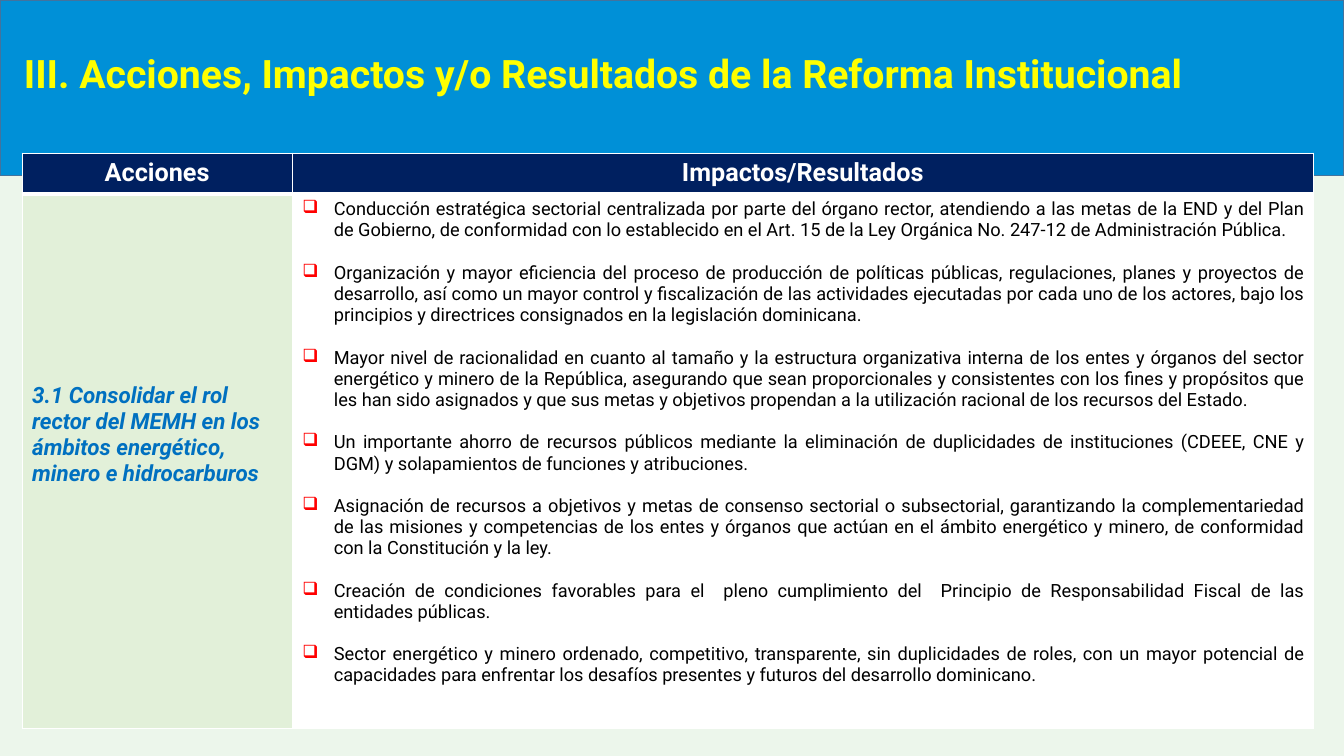
from lxml import etree
from pptx import Presentation
from pptx.dml.color import RGBColor
from pptx.enum import shapes, text
from pptx.oxml import ns
from pptx.util import Pt

FONT = "Roboto"
PALE_GREEN = RGBColor(0xEC, 0xF6, 0xEB)
BLUE = RGBColor(0x00, 0x90, 0xD7)
BLUE_EDGE = RGBColor(0x43, 0x73, 0x9E)
YELLOW = RGBColor(0xFF, 0xFF, 0x00)
NAVY = RGBColor(0x00, 0x20, 0x60)
WHITE = RGBColor(0xFF, 0xFF, 0xFF)
LIGHT_GREEN = RGBColor(0xE2, 0xF0, 0xD9)
ACTION_BLUE = RGBColor(0x00, 0x70, 0xC0)
BLACK = RGBColor(0x00, 0x00, 0x00)
RED = RGBColor(0xFF, 0x00, 0x00)

HEADERS = ["Acciones", "Impactos/Resultados"]
ACTION = "3.1 Consolidar el rol rector del MEMH en los ámbitos energético, minero e hidrocarburos"
RESULTS = [
    "Conducción estratégica sectorial centralizada por parte del órgano rector, atendiendo a las metas "
    "de la END y del Plan de Gobierno, de conformidad con lo establecido en el Art. 15 de la Ley "
    "Orgánica No. 247-12 de Administración Pública.",
    "Organización y mayor eficiencia del proceso de producción de políticas públicas, regulaciones, "
    "planes y proyectos de desarrollo, así como un mayor control y fiscalización de las actividades "
    "ejecutadas por cada uno de los actores, bajo los principios y directrices consignados en la "
    "legislación dominicana.",
    "Mayor nivel de racionalidad en cuanto al tamaño y la estructura organizativa interna de los entes "
    "y órganos del sector energético y minero de la República, asegurando que sean proporcionales y "
    "consistentes con los fines y propósitos que les han sido asignados y que sus metas y objetivos "
    "propendan a la utilización racional de los recursos del Estado.",
    "Un importante ahorro de recursos públicos mediante la eliminación de duplicidades de instituciones "
    "(CDEEE, CNE y DGM) y solapamientos de funciones y atribuciones.",
    "Asignación de recursos a objetivos y metas de consenso sectorial o subsectorial, garantizando la "
    "complementariedad de las misiones y competencias de los entes y órganos que actúan en el ámbito "
    "energético y minero, de conformidad con la Constitución y la ley.",
    "Creación de condiciones favorables para el  pleno cumplimiento del  Principio de Responsabilidad "
    "Fiscal de las entidades públicas.",
    "Sector energético y minero ordenado, competitivo, transparente, sin duplicidades de roles, con un "
    "mayor potencial de capacidades para enfrentar los desafíos presentes y futuros del desarrollo "
    "dominicano.",
]


def add_text(p, content, size, color, bold=False, italic=False, align=text.PP_ALIGN.LEFT):
    p.alignment = align
    r = p.add_run()
    r.text = content
    r.font.name = FONT
    r.font.size = Pt(size)
    r.font.bold = bold
    r.font.italic = italic
    r.font.color.rgb = color


def style_cell(cell, fill, bottom=1):
    tcPr = cell._tc.get_or_add_tcPr()
    for side, width in (("L", 1), ("R", 1), ("T", 1), ("B", bottom)):
        ln = etree.SubElement(tcPr, ns.qn(f"a:ln{side}"), w=str(Pt(width)))
        line_fill = etree.SubElement(ln, ns.qn("a:solidFill"))
        etree.SubElement(line_fill, ns.qn("a:srgbClr"), val=str(WHITE))
    cell.fill.solid()
    cell.fill.fore_color.rgb = fill


prs = Presentation()
prs.slide_width, prs.slide_height = Pt(960), Pt(540)
s = prs.slides.add_slide(prs.slide_layouts[6])
s.background.fill.solid()
s.background.fill.fore_color.rgb = PALE_GREEN

# Title band
sp = s.shapes.add_shape(shapes.MSO_SHAPE.RECTANGLE, 0, 0, prs.slide_width, Pt(125.3))
sp.shadow.inherit = False
sp.fill.solid()
sp.fill.fore_color.rgb = BLUE
sp.line.color.rgb = BLUE_EDGE
sp.line.width = Pt(1)

# Title
tf = s.shapes.add_textbox(Pt(10), Pt(31.7), Pt(866), Pt(75)).text_frame
tf.word_wrap = True
add_text(tf.paragraphs[0], "III. Acciones, Impactos y/o Resultados de la Reforma Institucional",
         28, YELLOW, bold=True)

# Table frame
table = s.shapes.add_table(2, 2, Pt(15.8), Pt(109.4), Pt(922.4), Pt(411.2)).table
table.columns[0].width, table.columns[1].width = Pt(193), Pt(729.4)
table.rows[0].height, table.rows[1].height = Pt(29.2), Pt(382)

# Header row
for col, header in enumerate(HEADERS):
    cell = table.cell(0, col)
    style_cell(cell, NAVY, bottom=3)
    add_text(cell.text_frame.paragraphs[0], header, 18, WHITE, bold=True, align=text.PP_ALIGN.CENTER)

# Action cell
cell = table.cell(1, 0)
style_cell(cell, LIGHT_GREEN)
cell.margin_top = Pt(135)
add_text(cell.text_frame.paragraphs[0], ACTION, 16, ACTION_BLUE, bold=True, italic=True)

# Results cell with bullets
cell = table.cell(1, 1)
style_cell(cell, WHITE)
tf = cell.text_frame
for i, result in enumerate(RESULTS):
    p = tf.add_paragraph() if i else tf.paragraphs[0]
    pPr = p._p.get_or_add_pPr()
    pPr.set("marL", str(Pt(22.5)))
    pPr.set("indent", str(-Pt(22.5)))
    bullet_color = etree.SubElement(pPr, ns.qn("a:buClr"))
    etree.SubElement(bullet_color, ns.qn("a:srgbClr"), val=str(RED))
    etree.SubElement(pPr, ns.qn("a:buChar"), char="❑")
    if i:
        p.space_before = Pt(15.2)
    add_text(p, result, 13, BLACK, align=text.PP_ALIGN.JUSTIFY)

prs.save("out.pptx")
